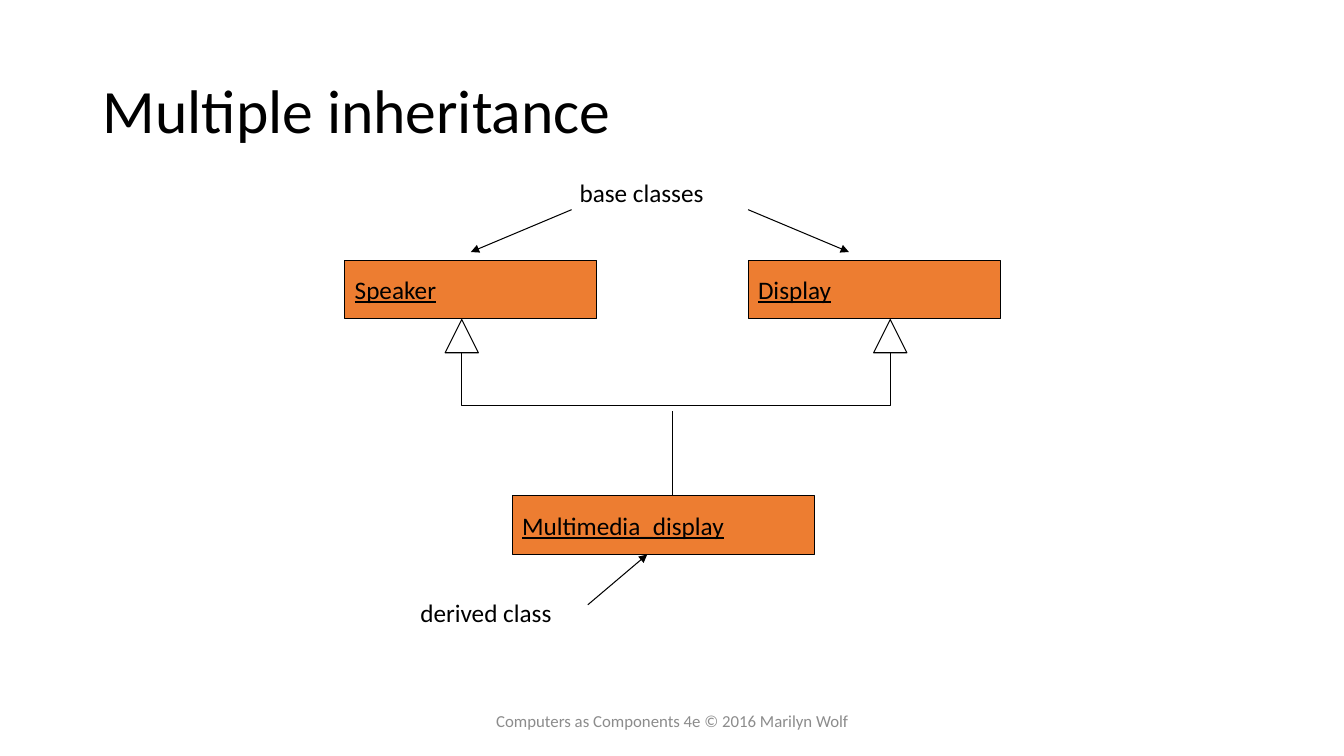
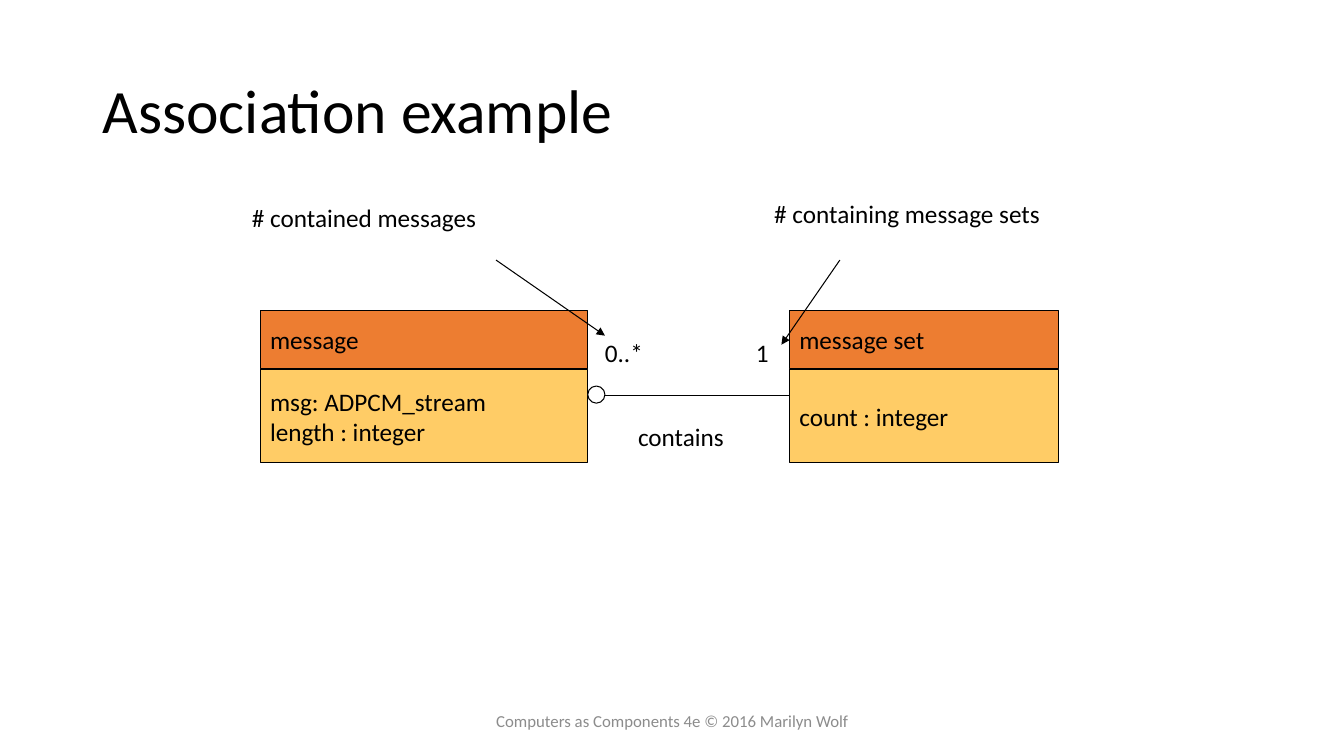
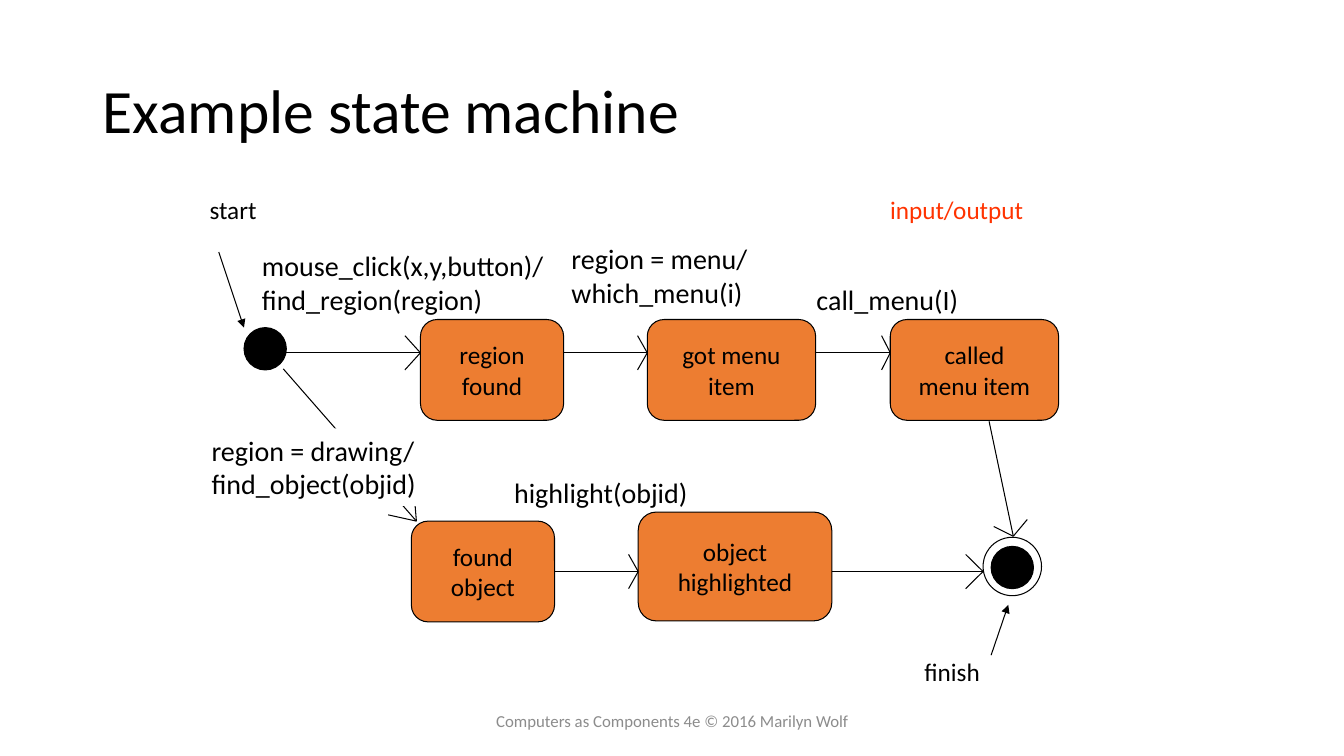
"""Builds three slides of object-oriented modelling diagrams."""
import math

from lxml import etree
from pptx import Presentation
from pptx.dml.color import RGBColor
from pptx.enum.shapes import MSO_CONNECTOR, MSO_SHAPE
from pptx.enum.text import MSO_ANCHOR, MSO_AUTO_SIZE, PP_ALIGN
from pptx.oxml.ns import qn
from pptx.util import Inches, Pt

RECTANGLE, ROUNDED = MSO_SHAPE.RECTANGLE, MSO_SHAPE.ROUNDED_RECTANGLE
ELLIPSE, TRIANGLE = MSO_SHAPE.OVAL, MSO_SHAPE.ISOSCELES_TRIANGLE
STRAIGHT = MSO_CONNECTOR.STRAIGHT
LEFT, CENTER = PP_ALIGN.LEFT, PP_ALIGN.CENTER
TOP, MIDDLE = MSO_ANCHOR.TOP, MSO_ANCHOR.MIDDLE
GROW, FIXED = MSO_AUTO_SIZE.SHAPE_TO_FIT_TEXT, MSO_AUTO_SIZE.NONE

FONT = "Calibri"
BLACK, WHITE, GRAY, RED = "000000", "FFFFFF", "8C8C8C", "FF3300"
ORANGE, YELLOW = "ED7D31", "FFCC66"
LINE_WIDTH = 0.75
HEADER_HEIGHT, BODY_HEIGHT = 0.58, 0.92
BARB_RATIO, BARB_HALF_WIDTH = 0.115, 0.17
FOOTER = "Computers as Components 4e © 2016 Marilyn Wolf"

INHERITANCE = {
    "title": "Multiple inheritance",
    "classes": [("Speaker", 3.42, 2.58, 2.5), ("Display", 7.42, 2.58, 2.5),
                ("Multimedia_display", 5.08, 4.92, 3)],
    "branches": [4.58, 8.83],
    "labels": [("base classes", 5.65, 1.71, 1.44), ("derived class", 4.07, 5.88, 1.52)],
    "pointers": [((5.67, 2.08), (4.67, 2.5)), ((7.42, 2.08), (8.42, 2.5)),
                 ((5.83, 6), (6.42, 5.5))],
}
ASSOCIATION = {
    "title": "Association example",
    "classes": [("message", "msg: ADPCM_stream\nlength : integer", 2.58, 3.25),
                ("message set", "count : integer", 7.83, 2.67)],
    "labels": [("0..*", 5.9, 3.3, 0.58), ("1", 7.4, 3.3, 0.33),
               ("contains", 6.23, 4.13, 1.06),
               ("# contained messages", 2.4, 1.96, 2.45),
               ("# containing message sets", 7.58, 1.92, 2.87)],
    "pointers": [((4.92, 2.58), (6, 3.33)), ((8.33, 2.58), (7.75, 3.42))],
}
STATE_MACHINE = {
    "title": "Example state machine",
    "states": [("region\nfound", 4.17, 3.17, 1.42, 1),
               ("got menu\nitem", 6.42, 3.17, 1.67, 1),
               ("called\nmenu item", 8.83, 3.17, 1.67, 1),
               ("found\nobject", 4.08, 5.17, 1.42, 1),
               ("object\nhighlighted", 6.33, 5.08, 1.92, 1.08)],
    "circles": [(2.42, 3.25, 0.42, BLACK), (9.83, 5.42, 0.42, BLACK),
                (9.75, 5.33, 0.58, None)],
    "transitions": [((2.83, 3.5), (4.17, 3.5)), ((5.58, 3.5), (6.42, 3.5)),
                    ((8.08, 3.5), (8.83, 3.5)), ((9.81, 4.18), (10.05, 5.32)),
                    ((2.81, 3.66), (4.13, 5.17)), ((5.5, 5.67), (6.33, 5.67)),
                    ((8.25, 5.67), (9.75, 5.67))],
    "labels": [("start", 1.98, 1.88, 0.67), ("finish", 9.07, 6.46, 0.76)],
    "key": ("input/output", 8.73, 1.88, 1.54),
    "pointers": [((2.17, 2.5), (2.42, 3.25)), ((9.83, 6.5), (10, 6))],
    "events": [("mouse_click(x,y,button)/\nfind_region(region)", 2.5, 2.42, 3.03, 0.77, None),
               ("region = menu/\nwhich_menu(i)", 5.57, 2.35, 1.96, 0.77, None),
               ("call_menu(I)", 8, 2.75, 1.63, 0.43, None),
               ("region = drawing/\nfind_object(objid)", 2, 4.25, 2.25, 0.77, WHITE),
               ("highlight(objid)", 5, 4.67, 1.95, 0.43, None)],
}


def color(value):
    return RGBColor.from_string(value)


def set_fill(shape, fill):
    if fill:
        shape.fill.solid()
        shape.fill.fore_color.rgb = color(fill)
    else:
        shape.fill.background()


def set_line(shape):
    shape.line.color.rgb = color(BLACK)
    shape.line.width = Pt(LINE_WIDTH)


def write_text(shape, text, size=18, text_color=BLACK, align=LEFT, anchor=MIDDLE,
               underline=None, spacing=None, wrap=True, auto_size=FIXED):
    frame = shape.text_frame
    frame.text = text
    frame.auto_size = auto_size
    frame.word_wrap = wrap
    frame.vertical_anchor = anchor
    for paragraph in frame.paragraphs:
        paragraph.alignment = align
        paragraph.line_spacing = spacing
        font = paragraph.runs[0].font
        font.name, font.size, font.underline = FONT, Pt(size), underline
        font.color.rgb = color(text_color)


def add_text(slide, text, left, top, width, height, fill=None, **text_format):
    box = slide.shapes.add_textbox(*map(Inches, (left, top, width, height)))
    set_fill(box, fill)
    write_text(box, text, **text_format)


def add_label(slide, text, left, top, width, height=0.4, **text_format):
    add_text(slide, text, left, top, width, height, anchor=TOP, wrap=False,
             auto_size=GROW, **text_format)


def add_figure(slide, kind, left, top, width, height, fill, text="", **text_format):
    shape = slide.shapes.add_shape(kind, *map(Inches, (left, top, width, height)))
    shape.shadow.inherit = False
    set_fill(shape, fill)
    set_line(shape)
    if text:
        write_text(shape, text, **text_format)


def add_line(slide, start, end, arrow=False):
    connector = slide.shapes.add_connector(STRAIGHT, *map(Inches, (*start, *end)))
    set_line(connector)
    if arrow:
        etree.SubElement(connector.line._get_or_add_ln(), qn("a:tailEnd"), type="triangle")
    etree.SubElement(connector._element.spPr, qn("a:effectLst"))


def add_polyline(slide, points):
    first, *others = [tuple(map(Inches, point)) for point in points]
    builder = slide.shapes.build_freeform(*first)
    builder.add_line_segments(others, close=False)
    shape = builder.convert_to_shape()
    shape.shadow.inherit = False
    set_fill(shape, None)
    set_line(shape)


def add_transition(slide, start, tip):
    add_line(slide, start, tip)
    across, down = tip[0] - start[0], tip[1] - start[1]
    length = math.hypot(across, down)
    for side in (-BARB_HALF_WIDTH, BARB_HALF_WIDTH):
        barb = (tip[0] - BARB_RATIO * across - side * down / length,
                tip[1] - BARB_RATIO * down + side * across / length)
        add_line(slide, tip, barb)


def add_base_slide(presentation, content):
    slide = presentation.slides.add_slide(presentation.slide_layouts[6])
    add_text(slide, content["title"], 0.92, 0.4, 11.5, 1.45, size=44, spacing=0.9)
    add_text(slide, FOOTER, 4.42, 6.95, 4.5, 0.4, size=12, text_color=GRAY, align=CENTER)
    return slide


def add_annotations(slide, content):
    for label in content["labels"]:
        add_label(slide, *label)
    for start, end in content["pointers"]:
        add_line(slide, start, end, arrow=True)


def build_inheritance(presentation, content):
    slide = add_base_slide(presentation, content)
    for name, left, top, width in content["classes"]:
        add_figure(slide, RECTANGLE, left, top, width, HEADER_HEIGHT, ORANGE, name,
                   underline=True)
    size, top, bar = 0.33, 3.17, 4.02
    first, last = content["branches"]
    for center in (first, last):
        add_figure(slide, TRIANGLE, center - size / 2, top, size, size, WHITE)
    add_polyline(slide, [(first, top + size), (first, bar), (last, bar), (last, top + size)])
    add_line(slide, (6.67, 4.08), (6.67, 4.92))
    add_annotations(slide, content)


def build_association(presentation, content):
    slide = add_base_slide(presentation, content)
    for name, attributes, left, width in content["classes"]:
        add_figure(slide, RECTANGLE, left, 3.08, width, HEADER_HEIGHT, ORANGE, name)
        add_figure(slide, RECTANGLE, left, 3.67, width, BODY_HEIGHT, YELLOW, attributes)
    add_line(slide, (5.83, 3.92), (7.83, 3.92))
    add_figure(slide, ELLIPSE, 5.83, 3.83, 0.17, 0.17, WHITE)
    add_annotations(slide, content)


def build_state_machine(presentation, content):
    slide = add_base_slide(presentation, content)
    for text, left, top, width, height in content["states"]:
        add_figure(slide, ROUNDED, left, top, width, height, ORANGE, text, align=CENTER)
    for left, top, size, fill in content["circles"]:
        add_figure(slide, ELLIPSE, left, top, size, size, fill)
    for start, tip in content["transitions"]:
        add_transition(slide, start, tip)
    add_annotations(slide, content)
    add_label(slide, *content["key"], text_color=RED)
    for text, left, top, width, height, fill in content["events"]:
        add_label(slide, text, left, top, width, height, fill=fill, size=20)


def main():
    presentation = Presentation()
    presentation.slide_width, presentation.slide_height = Inches(13.33), Inches(7.5)
    build_inheritance(presentation, INHERITANCE)
    build_association(presentation, ASSOCIATION)
    build_state_machine(presentation, STATE_MACHINE)
    presentation.save("out.pptx")


if __name__ == "__main__":
    main()
